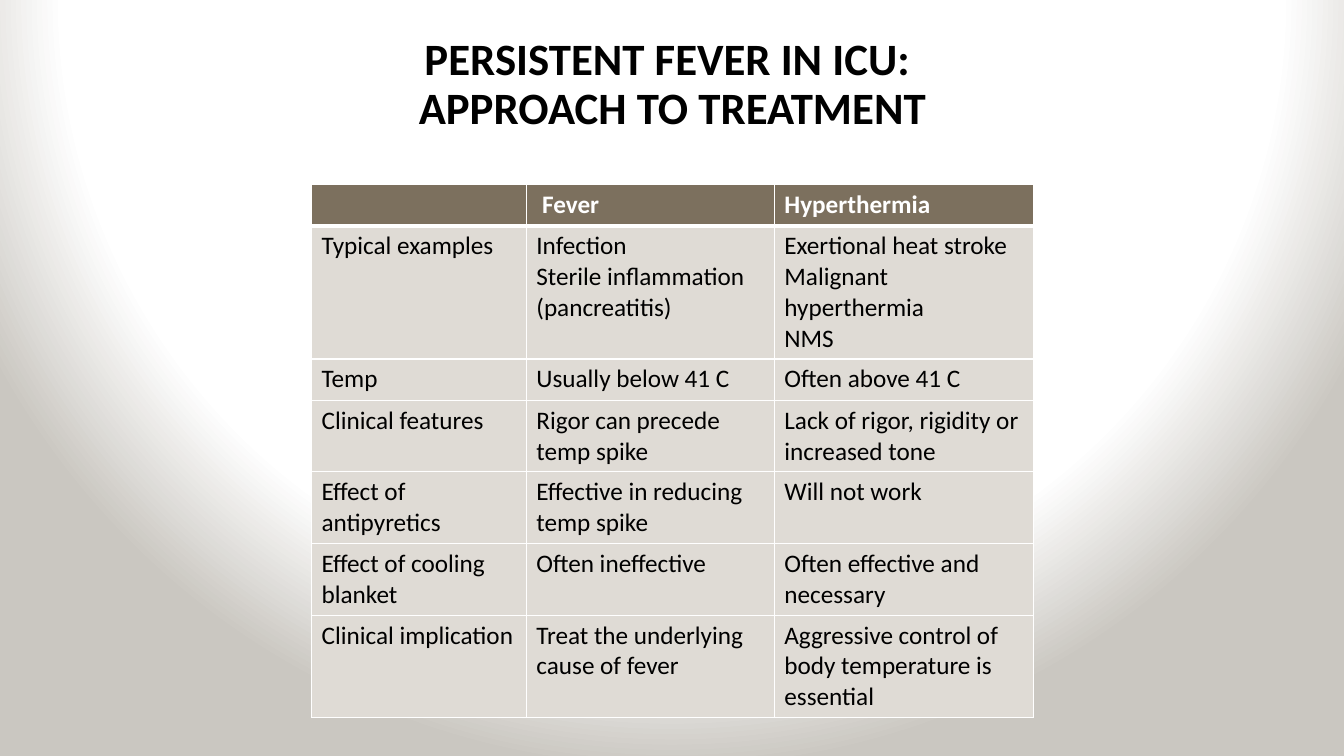
from pptx import Presentation
from pptx.dml.color import RGBColor
from pptx.enum.text import MSO_ANCHOR, PP_ALIGN
from pptx.oxml import parse_xml
from pptx.oxml.ns import nsdecls, qn
from pptx.util import Inches, Pt

WHITE = RGBColor(0xFF, 0xFF, 0xFF)
BLACK = RGBColor(0, 0, 0)
STONE = RGBColor(0xCA, 0xC7, 0xC1)
HEADER_BROWN = RGBColor(0x7C, 0x70, 0x5E)
BODY_BEIGE = RGBColor(0xDF, 0xDB, 0xD5)
FONT = "Calibri"

TITLE = "PERSISTENT FEVER IN ICU: \vAPPROACH TO TREATMENT"
COLUMN_WIDTHS = [2.13, 2.46, 2.57]
ROW_HEIGHTS = [0.41, 1.32, 0.41, 0.71, 0.71, 0.71, 1.02]
COMPARISON = [
    ["", " Fever", "Hyperthermia"],
    ["Typical examples", "Infection\nSterile inflammation (pancreatitis)",
     "Exertional heat stroke\nMalignant hyperthermia\nNMS"],
    ["Temp", "Usually below 41 C", "Often above 41 C"],
    ["Clinical features", "Rigor can precede temp spike",
     "Lack of rigor, rigidity or increased tone"],
    ["Effect of antipyretics", "Effective in reducing temp spike", "Will not work"],
    ["Effect of cooling blanket", "Often ineffective", "Often effective and necessary"],
    ["Clinical implication", "Treat the underlying cause of fever",
     "Aggressive control of body temperature is essential"],
]


def set_font(para, size, color, bold):
    para.font.name = FONT
    para.font.size = Pt(size)
    para.font.bold = bold
    para.font.color.rgb = color


def paint_background(page):
    """Radial glow: white centre fading to stone at the edges."""
    fill = page.background.fill
    fill.gradient()
    for stop, position, color in zip(fill.gradient_stops, (0.79, 1), (WHITE, STONE)):
        stop.position = position
        stop.color.rgb = color
    gradient = page.element.find(".//" + qn("a:gradFill"))
    gradient.replace(gradient.find(qn("a:lin")), parse_xml(
        f'<a:path {nsdecls("a")} path="circle">'
        '<a:fillToRect l="43000" t="0" r="43000" b="100000"/></a:path>'))


def add_title(page, left, top, width, height):
    box = page.shapes.add_textbox(Inches(left), Inches(top), Inches(width), Inches(height))
    frame = box.text_frame
    frame.word_wrap = True
    frame.vertical_anchor = MSO_ANCHOR.TOP
    para = frame.paragraphs[0]
    para.text = TITLE
    para.alignment = PP_ALIGN.CENTER
    para.line_spacing = 0.9
    set_font(para, 32, BLACK, True)


def set_borders(cell, top, bottom):
    for side, weight in (("L", 1), ("R", 1), ("T", top), ("B", bottom)):
        cell._tc.get_or_add_tcPr().append(parse_xml(
            f'<a:ln{side} {nsdecls("a")} w="{Pt(weight)}"><a:solidFill>'
            f'<a:srgbClr val="{WHITE}"/></a:solidFill></a:ln{side}>'))


def add_comparison_table(page, left, top):
    table = page.shapes.add_table(
        len(ROW_HEIGHTS), len(COLUMN_WIDTHS), Inches(left), Inches(top),
        Inches(sum(COLUMN_WIDTHS)), Inches(sum(ROW_HEIGHTS))).table
    for column, width in zip(table.columns, COLUMN_WIDTHS):
        column.width = Inches(width)
    for index, (row, height, texts) in enumerate(zip(table.rows, ROW_HEIGHTS, COMPARISON)):
        row.height = Inches(height)
        header = index == 0
        for cell, text in zip(row.cells, texts):
            # A heavier rule separates the header from the body
            set_borders(cell, 3 if index == 1 else 1, 3 if header else 1)
            cell.fill.solid()
            cell.fill.fore_color.rgb = HEADER_BROWN if header else BODY_BEIGE
            cell.text = text
            for para in cell.text_frame.paragraphs:
                set_font(para, 18, WHITE if header else BLACK, header)


def main():
    deck = Presentation()
    deck.slide_width, deck.slide_height = Inches(13.33), Inches(7.5)
    page = deck.slides.add_slide(deck.slide_layouts[6])
    paint_background(page)
    add_comparison_table(page, 3.09, 1.83)
    add_title(page, 3.94, 0.32, 5.46, 1.37)
    deck.save("out.pptx")


if __name__ == "__main__":
    main()
